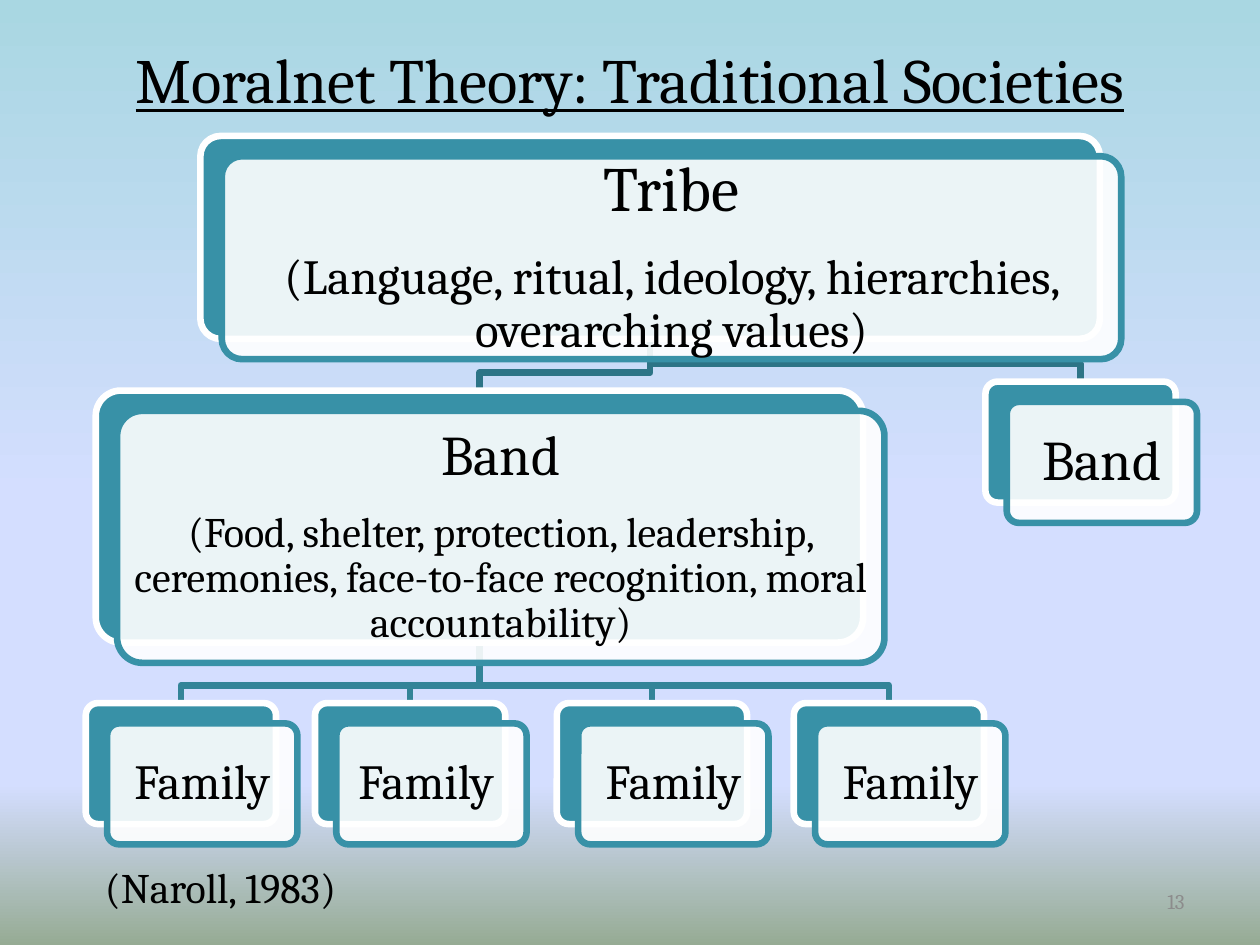
from copy import deepcopy
from dataclasses import dataclass
from pptx import Presentation
from pptx.dml.color import RGBColor as RGB
from pptx.enum.shapes import MSO_SHAPE as Shape
from pptx.enum.text import MSO_ANCHOR as Anchor, PP_ALIGN as Align
from pptx.oxml.ns import qn
from pptx.util import Pt
from lxml.etree import SubElement


@dataclass(frozen=True)
class Theme:
    font: str = "Cambria"
    ink: str = "000000"
    muted: str = "8C8C8C"
    teal: str = "3891A7"
    white: str = "FFFFFF"
    upper_link: str = "2D7486"
    lower_link: str = "338498"
    sky: tuple = ((0, "A9D7E2"), (53, "D4DEFF"), (83, "D4DEFF"), (100, "96AB94"))
    title: int = 36
    tribe: int = 36
    band: int = 32
    detail: int = 28
    small: int = 24
    number: int = 12
    stroke: float = 3.78


T = Theme()
CORNER = 0.1
OFFSET = (12.2, 11.6)
ELBOW = 10.2


def paint_background(slide):
    fill = slide.background.fill
    fill.gradient()
    fill.gradient_angle = 270
    stops = slide._element.find(".//" + qn("a:gsLst"))
    for _ in range(len(T.sky) - len(stops)):
        stops.append(deepcopy(stops[0]))
    for stop, (pos, color) in zip(fill.gradient_stops, T.sky):
        stop.position = pos / 100
        stop.color.rgb = RGB.from_string(color)


def write(tf, lines, color=T.ink, align=Align.CENTER, **formats):
    tf.word_wrap = True
    tf.vertical_anchor = Anchor.MIDDLE
    for i, (text, size) in enumerate(lines):
        p = tf.paragraphs[0] if i == 0 else tf.add_paragraph()
        p.alignment = align
        if i:
            p.space_before = Pt(0.42 * lines[0][1])
        r = p.add_run()
        r.text = text
        for key, value in {"name": T.font, "size": Pt(size), **formats}.items():
            setattr(r.font, key, value)
        r.font.color.rgb = RGB.from_string(color)
    return tf


def add_label(slide, box, text, size, **formats):
    sp = slide.shapes.add_textbox(*map(Pt, box))
    write(sp.text_frame, [(text, size)], **formats)


def stroke(sp, color):
    sp.shadow.inherit = False
    sp.line.color.rgb = RGB.from_string(color)
    sp.line.width = Pt(T.stroke)


def add_panel(shapes, box, fill, line):
    sp = shapes.add_shape(Shape.ROUNDED_RECTANGLE, *map(Pt, box))
    sp.adjustments[0] = CORNER
    sp.fill.solid()
    sp.fill.fore_color.rgb = RGB.from_string(fill)
    stroke(sp, line)
    return sp


def add_card(shapes, box, lines):
    x, y, w, h = box
    add_panel(shapes, box, T.teal, T.white)
    front = add_panel(shapes, (x + OFFSET[0], y + OFFSET[1], w, h), T.white, T.teal)
    color = front._element.spPr.find(qn("a:solidFill"))[0]
    SubElement(color, qn("a:alpha")).set("val", "90000")
    tf = write(front.text_frame, lines)
    inset = Pt(0.285 * lines[0][1] - 0.293 * CORNER * min(w, h))
    for side in ("left", "top", "right", "bottom"):
        setattr(tf, f"margin_{side}", inset)
    for p in tf.paragraphs:
        p.line_spacing = 0.9


def add_link(shapes, parent, child, color):
    x1, y1 = parent[0] + parent[2] / 2, parent[1] + parent[3]
    x2, y2 = child[0] + child[2] / 2, child[1]
    bend = y2 - ELBOW
    path = [(x1, bend), (x2, bend), (x2, y2)]
    builder = shapes.build_freeform(Pt(x1), Pt(y1))
    builder.add_line_segments([(Pt(x), Pt(y)) for x, y in path], close=False)
    sp = builder.convert_to_shape()
    sp.fill.background()
    stroke(sp, color)


def add_society_tree(slide, box):
    left, top, width, height = box
    small_w, small_h = 108.7, 69.1
    tribe = (left + 65.5, top, 514, 116)
    main_band = (left + 5.7, top + 145.5, 438.5, 144)
    side_band = (left + width - OFFSET[0] - small_w, top + 140.4, small_w, small_h)
    family_y = top + height - OFFSET[1] - small_h
    families = [(left + dx, family_y, small_w, small_h) for dx in (0, 131, 269.2, 404.6)]
    names = ["Family", "Family ", "Family", "Family"]

    shapes = slide.shapes.add_group_shape().shapes
    for band in (side_band, main_band):
        add_link(shapes, tribe, band, T.upper_link)
    for family in families:
        add_link(shapes, main_band, family, T.lower_link)
    add_card(shapes, tribe, [
        ("Tribe", T.tribe),
        ("(Language, ritual, ideology, hierarchies, overarching values)", T.detail)])
    add_card(shapes, main_band, [
        ("Band", T.band),
        ("(Food, shelter, protection, leadership, ceremonies, "
         "face-to-face recognition, moral accountability)", T.small)])
    for family, name in zip(families, names):
        add_card(shapes, family, [(name, T.detail)])
    add_card(shapes, side_band, [("Band", T.band)])


def main():
    prs = Presentation()
    prs.slide_width, prs.slide_height = Pt(720), Pt(540)
    slide = prs.slides.add_slide(prs.slide_layouts[6])
    paint_background(slide)
    add_label(slide, (36, 0, 648, 90), "Moralnet Theory: Traditional Societies",
              T.title, underline=True)
    add_society_tree(slide, (49, 77.7, 635, 404.8))
    add_label(slide, (12, 492, 228, 29), "(Naroll, 1983)", T.small)
    add_label(slide, (516, 500.5, 168, 29), "13", T.number,
              color=T.muted, align=Align.RIGHT)
    prs.save("out.pptx")


if __name__ == "__main__":
    main()
